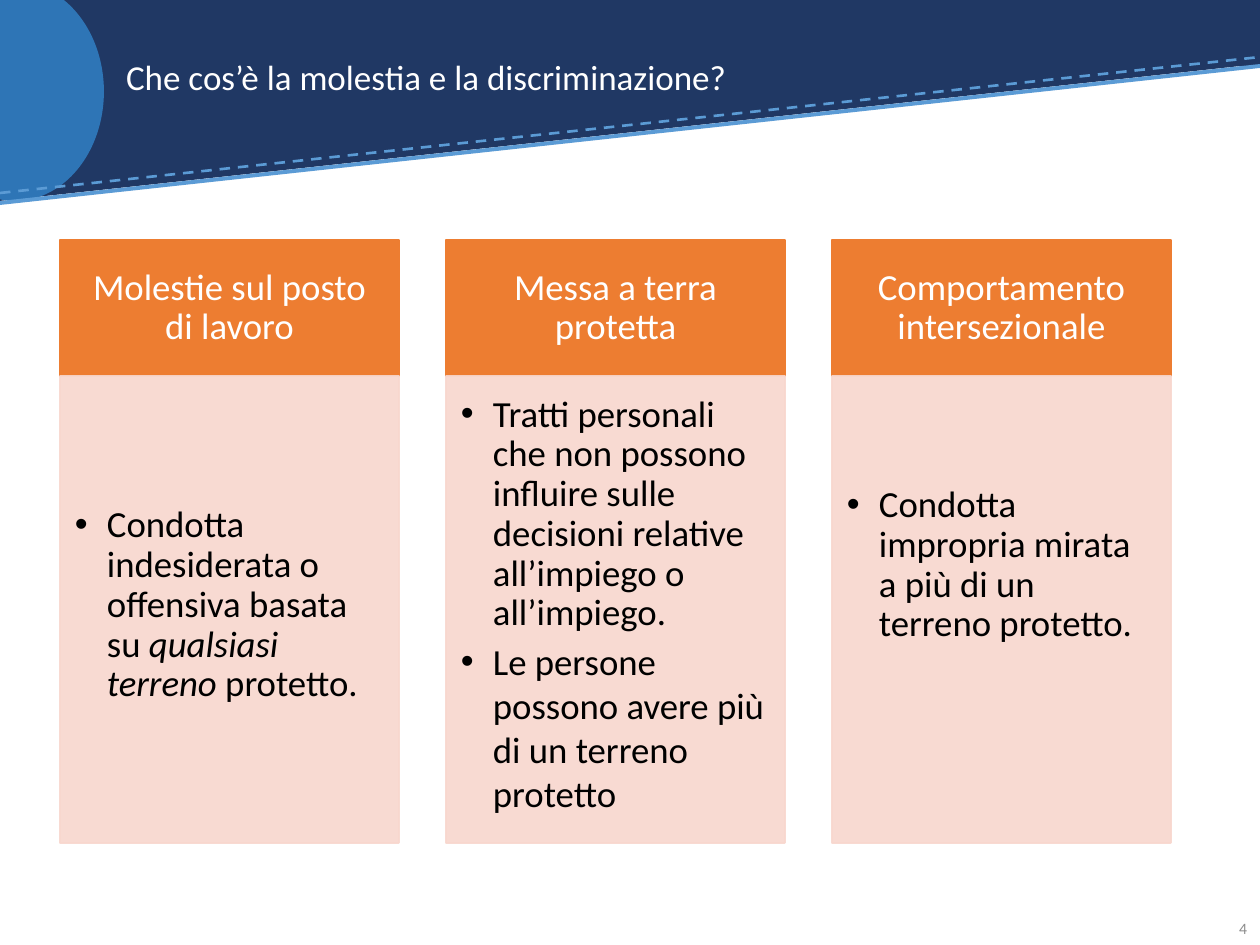
from lxml import etree
from pptx import Presentation, util as u
from pptx.dml.color import RGBColor
from pptx.enum import dml, shapes, text
from pptx.oxml.ns import qn

SCALE = u.Inches(1) / 126
FONT = "Calibri"
NAVY = RGBColor(0x20, 0x38, 0x64)
BLUE = RGBColor(0x2E, 0x75, 0xB6)
LIGHT_BLUE = RGBColor(0x5B, 0x9B, 0xD5)
ORANGE = RGBColor(0xED, 0x7D, 0x31)
PEACH = RGBColor(0xF8, 0xD7, 0xCE)
WHITE = RGBColor(0xFF, 0xFF, 0xFF)
BLACK = RGBColor(0, 0, 0)
GRAY = RGBColor(0x8C, 0x8C, 0x8C)

COLUMN_LEFT, COLUMN_STEP, COLUMN_WIDTH = 60, 386, 339
HEADING_TOP, HEADING_HEIGHT = 240, 136
BODY_TOP, BODY_HEIGHT = 376, 467
HEADING_INSETS = (20, 11, 20, 11)
BULLET_INDENT = 32

COLUMNS = [
    ("Molestie sul posto di lavoro",
     [([("Condotta indesiderata o offensiva basata su ", False),
        ("qualsiasi terreno ", True), ("protetto.", False)], 0.9)], 23),
    ("Messa a terra protetta",
     [([("Tratti personali che non possono influire sulle decisioni relative "
         "all’impiego o all’impiego.", False)], 0.9),
      ([("Le persone possono avere più di un terreno protetto", False)], 1.0)], 23),
    ("Comportamento intersezionale",
     [([("Condotta impropria mirata a più di un terreno protetto.", False)], 0.9)], 103),
]


def px(value):
    return u.Emu(round(value * SCALE))


def add_block(slide, kind, box, color, alpha=None, outlined=False):
    shape = slide.shapes.add_shape(kind, *map(px, box))
    shape.shadow.inherit = False
    shape.fill.solid()
    shape.fill.fore_color.rgb = color
    if outlined:
        shape.line.color.rgb = color
        shape.line.width = u.Pt(1)
    else:
        shape.line.fill.background()
    if alpha:
        for element in shape._element.spPr.iter(qn("a:srgbClr")):
            etree.SubElement(element, qn("a:alpha"), val=str(alpha * 1000))
    return shape


def add_stripe(slide, start_y, end_y, width, dash=None):
    line = slide.shapes.add_connector(
        shapes.MSO_CONNECTOR.STRAIGHT, 0, px(start_y), px(1260), px(end_y))
    line.line.color.rgb = LIGHT_BLUE
    line.line.width = u.Pt(width)
    if dash:
        line.line.dash_style = dash
    etree.SubElement(line._element.spPr, qn("a:effectLst"))


def set_frame(shape, insets):
    frame = shape.text_frame
    frame.word_wrap = True
    frame.vertical_anchor = text.MSO_ANCHOR.MIDDLE
    (frame.margin_left, frame.margin_top,
     frame.margin_right, frame.margin_bottom) = map(px, insets)
    return frame


def format_paragraph(paragraph, size, color, align, spacing=1.0):
    paragraph.alignment = align
    paragraph.line_spacing = spacing
    paragraph.font.name = FONT
    paragraph.font.size = u.Pt(size)
    paragraph.font.color.rgb = color


def add_label(slide, box, content, size, color, align, spacing=1.0):
    label = slide.shapes.add_textbox(*map(px, box))
    paragraph = set_frame(label, (13, 6, 13, 6)).paragraphs[0]
    paragraph.text = content
    format_paragraph(paragraph, size, color, align, spacing)


def add_bullet(paragraph):
    properties = paragraph._p.get_or_add_pPr()
    properties.set("marL", str(px(BULLET_INDENT)))
    properties.set("indent", str(-px(BULLET_INDENT)))
    etree.SubElement(properties, qn("a:buFont"), typeface="Arial")
    etree.SubElement(properties, qn("a:buChar"), char="•")


def add_column(slide, left, heading, bullets, bottom_inset):
    rectangle = shapes.MSO_SHAPE.RECTANGLE
    header = add_block(slide, rectangle, (left, HEADING_TOP, COLUMN_WIDTH, HEADING_HEIGHT),
                       ORANGE, outlined=True)
    paragraph = set_frame(header, HEADING_INSETS).paragraphs[0]
    paragraph.text = heading
    format_paragraph(paragraph, 21, WHITE, text.PP_ALIGN.CENTER, 0.9)

    body = add_block(slide, rectangle, (left, BODY_TOP, COLUMN_WIDTH, BODY_HEIGHT),
                     PEACH, alpha=90, outlined=True)
    frame = set_frame(body, (15, 15, 20, bottom_inset))
    for index, (runs, spacing) in enumerate(bullets):
        paragraph = frame.add_paragraph() if index else frame.paragraphs[0]
        add_bullet(paragraph)
        for content, italic in runs:
            run = paragraph.add_run()
            run.text = content
            if italic:
                run.font.italic = True
        format_paragraph(paragraph, 21, BLACK, text.PP_ALIGN.LEFT, spacing)
        paragraph.space_after = u.Pt(3)


def add_banner(slide):
    add_block(slide, shapes.MSO_SHAPE.RECTANGLE, (0, 0, 1260, 66), NAVY)
    wedge = add_block(slide, shapes.MSO_SHAPE.RIGHT_TRIANGLE, (0, 64, 1260, 137), NAVY)
    wedge._element.spPr.xfrm.set("flipV", "1")
    add_block(slide, shapes.MSO_SHAPE.OVAL, (-74, -18, 178, 219), BLUE)
    add_stripe(slide, 193, 57, 1.5, dml.MSO_LINE.DASH)
    add_stripe(slide, 203, 66, 2.25)
    add_label(slide, (113, 25, 1014, 108), "Che cos’è la molestia e la discriminazione?",
              20, WHITE, text.PP_ALIGN.LEFT, 0.9)


def main():
    presentation = Presentation()
    presentation.slide_width = px(1260)
    presentation.slide_height = px(945)
    slide = presentation.slides.add_slide(presentation.slide_layouts[6])
    add_banner(slide)
    add_label(slide, (1193, 903, 67, 50), "4", 9, GRAY, text.PP_ALIGN.RIGHT)
    for index, column in enumerate(COLUMNS):
        add_column(slide, COLUMN_LEFT + index * COLUMN_STEP, *column)
    presentation.save("out.pptx")


if __name__ == "__main__":
    main()
